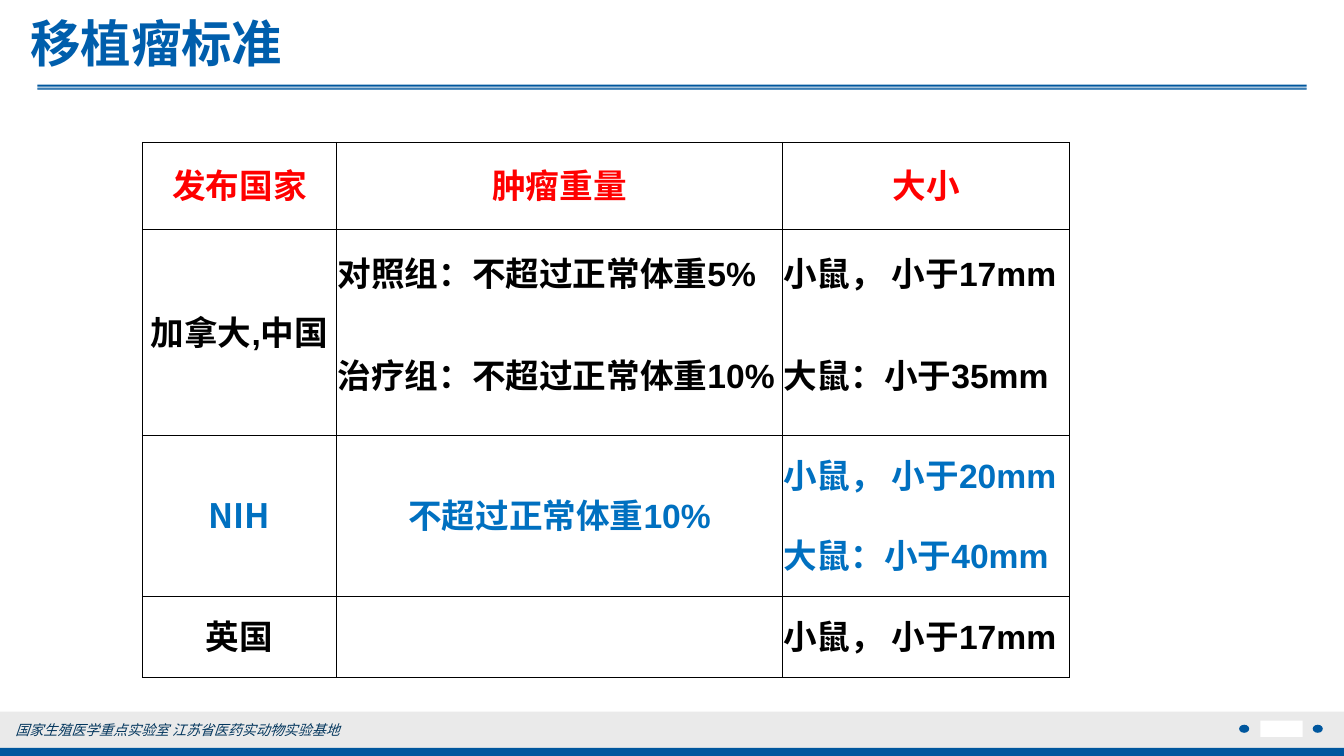
"""Builds a slide with a table of transplanted tumour limits by country."""
from lxml import etree
from pptx import Presentation
from pptx.dml.color import RGBColor
from pptx.enum.shapes import MSO_SHAPE
from pptx.enum.text import MSO_ANCHOR, PP_ALIGN
from pptx.oxml.ns import qn
from pptx.util import Inches, Pt

RECTANGLE, OVAL = MSO_SHAPE.RECTANGLE, MSO_SHAPE.OVAL
LEFT, CENTER = PP_ALIGN.LEFT, PP_ALIGN.CENTER
MIDDLE = MSO_ANCHOR.MIDDLE
NAVY = RGBColor(0x00, 0x57, 0x9E)
TITLE_BLUE = RGBColor(0x00, 0x5E, 0xAC)
FOOTER_BLUE = RGBColor(0x03, 0x36, 0x5D)
BLUE = RGBColor(0x00, 0x70, 0xC0)
RED = RGBColor(0xFF, 0x00, 0x00)
BLACK = RGBColor(0x00, 0x00, 0x00)
WHITE = RGBColor(0xFF, 0xFF, 0xFF)
GRAY = RGBColor(0xEA, 0xEA, 0xEA)
LATIN, CHINESE = "Arial", "Noto Sans CJK SC"
WIDTH, HEIGHT = 13.33, 7.5


def write(frame, text, size, color, align, face=LATIN):
    """Fill a text frame with one formatted paragraph."""
    frame.text = text
    para = frame.paragraphs[0]
    para.alignment = align
    for span in para.runs:
        span.font.size = Pt(size)
        span.font.name = face
        span.font.color.rgb = color
        east = etree.SubElement(span.font._element, qn("a:ea"))
        east.set("typeface", CHINESE)
    return para


def draw_border(cell, side, visible):
    """Add one black or hidden edge to a table cell."""
    line = etree.SubElement(cell._tc.get_or_add_tcPr(), qn("a:ln" + side))
    line.set("w", str(Pt(0.5)))
    if visible:
        fill = etree.SubElement(line, qn("a:solidFill"))
        etree.SubElement(fill, qn("a:srgbClr")).set("val", str(BLACK))
    else:
        etree.SubElement(line, qn("a:noFill"))


deck = Presentation()
deck.slide_width, deck.slide_height = Inches(WIDTH), Inches(HEIGHT)
page = deck.slides.add_slide(deck.slide_layouts[6])

decorations = [
    (RECTANGLE, 0.37, 0.84, 12.59, 0.02, NAVY),
    (RECTANGLE, 0.37, 0.87, 12.59, 0.01, NAVY),
    (RECTANGLE, 0.37, 0.88, 12.59, 0.01, NAVY),
    (RECTANGLE, 0, 7.06, WIDTH, 0.44, GRAY),
    (RECTANGLE, 0, 7.42, WIDTH, 0.08, NAVY),
    (OVAL, 12.29, 7.19, 0.1, 0.08, NAVY),
    (OVAL, 13.02, 7.19, 0.1, 0.08, NAVY),
    (RECTANGLE, 12.5, 7.15, 0.42, 0.16, WHITE),
]
for kind, left, top, width, height, color in decorations:
    shape = page.shapes.add_shape(
        kind, Inches(left), Inches(top), Inches(width), Inches(height))
    shape.shadow.inherit = False
    shape.fill.solid()
    shape.fill.fore_color.rgb = color
    shape.line.fill.background()

footer = page.shapes.add_textbox(
    Inches(0.01), Inches(7.11), Inches(3.5), Inches(0.27))
footer.text_frame.word_wrap = False
para = write(footer.text_frame, "国家生殖医学重点实验室 江苏省医药实动物实验基地",
             10, FOOTER_BLUE, CENTER)
para.runs[0].font.italic = True

title = page.shapes.add_textbox(0, 0, Inches(WIDTH), Inches(0.84))
title.text_frame.word_wrap = True
title.text_frame.vertical_anchor = MIDDLE
title.text_frame.margin_left = Inches(0.3)
para = write(title.text_frame, "移植瘤标准", 36, TITLE_BLUE, LEFT, CHINESE)
para.runs[0].font.bold = True

column_widths = [1.93, 4.42, 2.85]
row_heights = [0.87, 0.87, 1.17, 0.8, 0.8, 0.8]
row_colors = [RED, BLACK, BLACK, BLUE, BLUE, BLACK]
limits = [
    ["发布国家", "肿瘤重量", "大小"],
    ["加拿大,中国", "对照组：不超过正常体重5%", "小鼠， 小于17mm"],
    ["", "治疗组：不超过正常体重10%", "大鼠：小于35mm"],
    ["NIH", "不超过正常体重10%", "小鼠， 小于20mm"],
    ["", "", "大鼠：小于40mm"],
    ["英国", "", "小鼠， 小于17mm"],
]
centered = {(3, 1)}
paired_rows = {1: 2, 3: 4}

table = page.shapes.add_table(
    len(row_heights), len(column_widths), Inches(1.41), Inches(1.41),
    Inches(sum(column_widths)), Inches(sum(row_heights))).table
table.first_row = table.horz_banding = False
for column, width in zip(table.columns, column_widths):
    column.width = Inches(width)
for row, height in zip(table.rows, row_heights):
    row.height = Inches(height)

for r, texts in enumerate(limits):
    for c, text in enumerate(texts):
        cell = table.cell(r, c)
        cell.margin_left = cell.margin_right = cell.margin_top = Inches(0.01)
        cell.margin_bottom = Inches(0.05)
        cell.vertical_anchor = MIDDLE
        for side in "LR":
            draw_border(cell, side, True)
        draw_border(cell, "T", r not in paired_rows.values())
        draw_border(cell, "B", r not in paired_rows)
        cell.fill.background()
        if text:
            align = CENTER if r == 0 or c == 0 or (r, c) in centered else LEFT
            face = CHINESE if text == "NIH" else LATIN
            para = write(cell.text_frame, text, 24, row_colors[r], align, face)
            para.runs[0].font.bold = True

for r, c in [(1, 0), (3, 0), (3, 1)]:
    table.cell(r, c).merge(table.cell(paired_rows[r], c))

deck.save("out.pptx")
